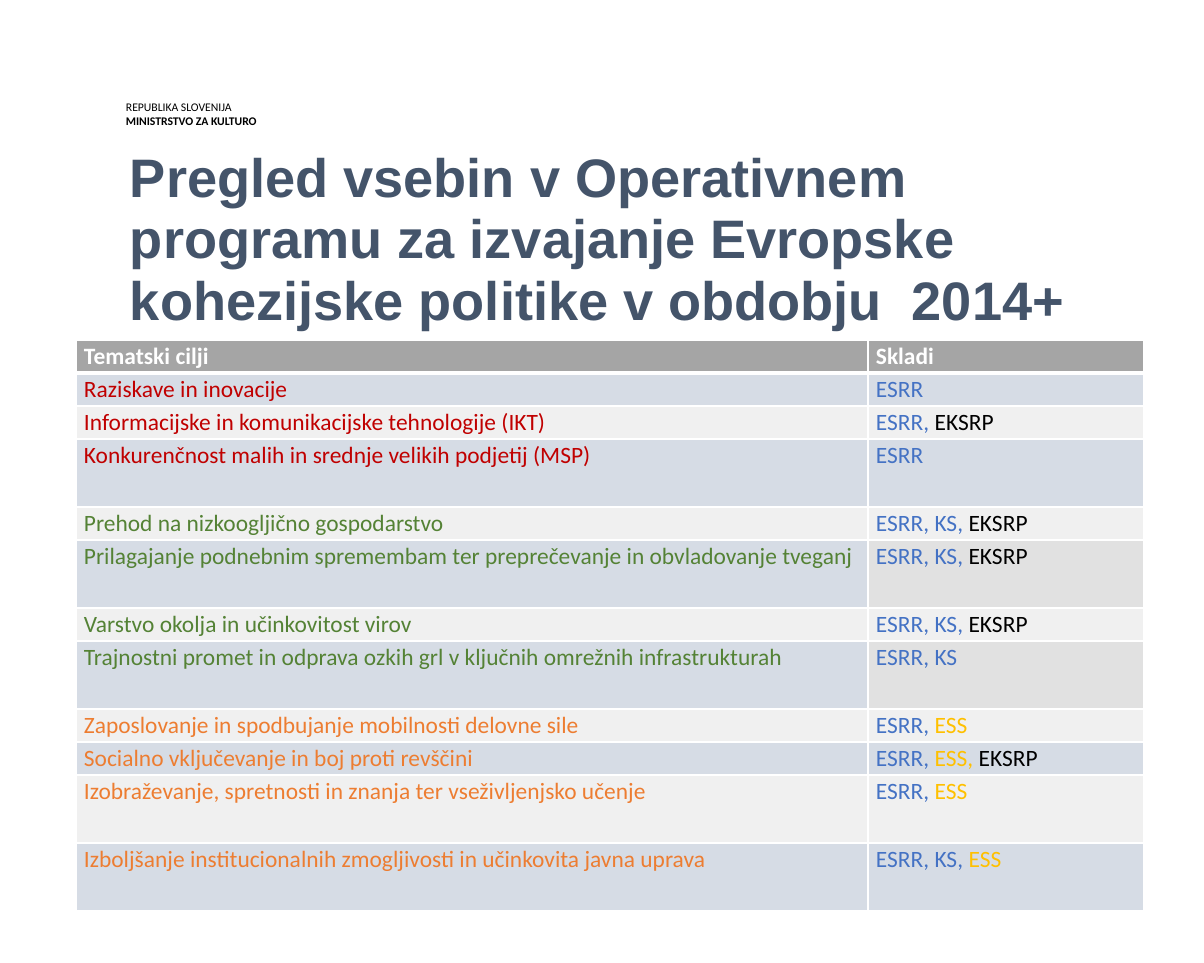
"""Build the overview slide of cohesion policy goals and their funds."""
from dataclasses import dataclass

from lxml.etree import SubElement
from pptx import Presentation
from pptx.dml.color import RGBColor
from pptx.oxml.ns import qn
from pptx.util import Emu, Pt

PX = 7595
MARGIN = 8
SINGLE, DOUBLE = 33, 68
COLUMNS = (792, 276)
COLORS = {
    "black": "000000", "white": "FFFFFF", "title": "44546A", "header": "A5A5A5",
    "blue_band": "D6DCE5", "light_band": "F0F0F0", "gray_band": "E1E1E1",
    "red": "C00000", "green": "548235", "orange": "ED7D31",
    "blue": "4472C4", "gold": "FFC000",
}


@dataclass(frozen=True)
class Run:
    text: str
    color: str


@dataclass(frozen=True)
class Goal:
    name: Run
    funds: tuple[Run, ...]
    height: int = SINGLE
    fund_fill: str = ""


@dataclass(frozen=True)
class Box:
    left: int
    top: int
    width: int
    height: int


ESRR = Run("ESRR", "blue")
ESRR_AND = Run("ESRR, ", "blue")
ESRR_KS_AND = Run("ESRR, KS, ", "blue")
EKSRP = Run("EKSRP", "black")
ESS = Run("ESS", "gold")

GOALS = (
    Goal(Run("Raziskave in inovacije", "red"), (ESRR,)),
    Goal(Run("Informacijske in komunikacijske tehnologije (IKT)", "red"), (ESRR_AND, EKSRP)),
    Goal(Run("Konkurenčnost malih in srednje velikih podjetij (MSP)", "red"), (ESRR,), DOUBLE),
    Goal(Run("Prehod na nizkoogljično gospodarstvo", "green"), (ESRR_KS_AND, EKSRP)),
    Goal(Run("Prilagajanje podnebnim spremembam ter preprečevanje in obvladovanje tveganj", "green"),
         (ESRR_KS_AND, EKSRP), DOUBLE, "gray_band"),
    Goal(Run("Varstvo okolja in učinkovitost virov", "green"), (ESRR_KS_AND, EKSRP)),
    Goal(Run("Trajnostni promet in odprava ozkih grl v ključnih omrežnih infrastrukturah", "green"),
         (Run("ESRR, KS", "blue"),), DOUBLE, "gray_band"),
    Goal(Run("Zaposlovanje in spodbujanje mobilnosti delovne sile", "orange"), (ESRR_AND, ESS)),
    Goal(Run("Socialno vključevanje in boj proti revščini", "orange"),
         (ESRR_AND, Run("ESS,", "gold"), Run(" EKSRP", "black"))),
    Goal(Run("Izobraževanje, spretnosti in znanja ter vseživljenjsko učenje", "orange"),
         (ESRR_AND, ESS), DOUBLE),
    Goal(Run("Izboljšanje institucionalnih zmogljivosti in učinkovita javna uprava", "orange"),
         (ESRR_KS_AND, ESS), DOUBLE),
)


def px(n: int) -> Emu:
    return Emu(n * PX)


def add_text(p, text: str, *, size: float, color: str, font: str = "Calibri",
             bold: bool = False, spacing=1.07) -> None:
    p.line_spacing = spacing
    r = p.add_run()
    r.text = text
    r.font.name = font
    r.font.size = Pt(size)
    r.font.bold = bold
    r.font.color.rgb = RGBColor.from_string(COLORS[color])


def add_box(s, box: Box):
    sp = s.shapes.add_textbox(px(box.left), px(box.top), px(box.width), px(box.height))
    tf = sp.text_frame
    tf.word_wrap = True
    tf.margin_left = tf.margin_right = tf.margin_top = tf.margin_bottom = 0
    return tf


def set_borders(cell, top: int, bottom: int) -> None:
    tc_pr = cell._tc.get_or_add_tcPr()
    for side, width in {"L": 1, "R": 1, "T": top, "B": bottom}.items():
        ln = SubElement(tc_pr, qn(f"a:ln{side}"), w=str(Pt(width)))
        fill = SubElement(ln, qn("a:solidFill"))
        SubElement(fill, qn("a:srgbClr"), val=COLORS["white"])


def fill_cell(cell, runs: tuple[Run, ...], fill: str, *, bold: bool = False,
              top: int = 1, bottom: int = 1) -> None:
    cell.margin_left = cell.margin_right = px(MARGIN)
    cell.margin_top = cell.margin_bottom = 0
    set_borders(cell, top, bottom)
    cell.fill.solid()
    cell.fill.fore_color.rgb = RGBColor.from_string(COLORS[fill])
    p = cell.text_frame.paragraphs[0]
    for run in runs:
        add_text(p, run.text, size=14, color=run.color, bold=bold)


def add_goal_table(s, left: int, top: int) -> None:
    heights = [SINGLE] + [goal.height for goal in GOALS]
    table = s.shapes.add_table(len(heights), len(COLUMNS), px(left), px(top),
                               px(sum(COLUMNS)), px(sum(heights))).table
    table.horz_banding = False
    for column, width in zip(table.columns, COLUMNS):
        column.width = px(width)
    for row, height in zip(table.rows, heights):
        row.height = px(height)
    for col, label in enumerate(("Tematski cilji", "Skladi")):
        fill_cell(table.cell(0, col), (Run(label, "white"),), "header", bold=True, bottom=3)
    for i, goal in enumerate(GOALS, start=1):
        band = "blue_band" if i % 2 else "light_band"
        edge = 3 if i == 1 else 1
        fill_cell(table.cell(i, 0), (goal.name,), band, top=edge)
        fill_cell(table.cell(i, 1), goal.funds, goal.fund_fill or band, top=edge)


def main() -> None:
    prs = Presentation()
    prs.slide_width, prs.slide_height = px(1204), px(963)
    s = prs.slides.add_slide(prs.slide_layouts[6])

    tf = add_box(s, Box(126, 100, 199, 26))
    add_text(tf.paragraphs[0], "REPUBLIKA SLOVENIJA", size=7, color="black", spacing=Pt(8.4))
    add_text(tf.add_paragraph(), "MINISTRSTVO ZA KULTURO", size=7, color="black",
             bold=True, spacing=Pt(8.4))

    tf = add_box(s, Box(130, 149, 948, 210))
    add_text(tf.paragraphs[0],
             "Pregled vsebin v Operativnem programu za izvajanje Evropske "
             "kohezijske politike v obdobju  2014+",
             size=32.4, color="title", font="Arial", bold=True, spacing=0.94)

    add_goal_table(s, 76, 340)
    prs.save("out.pptx")


if __name__ == "__main__":
    main()
